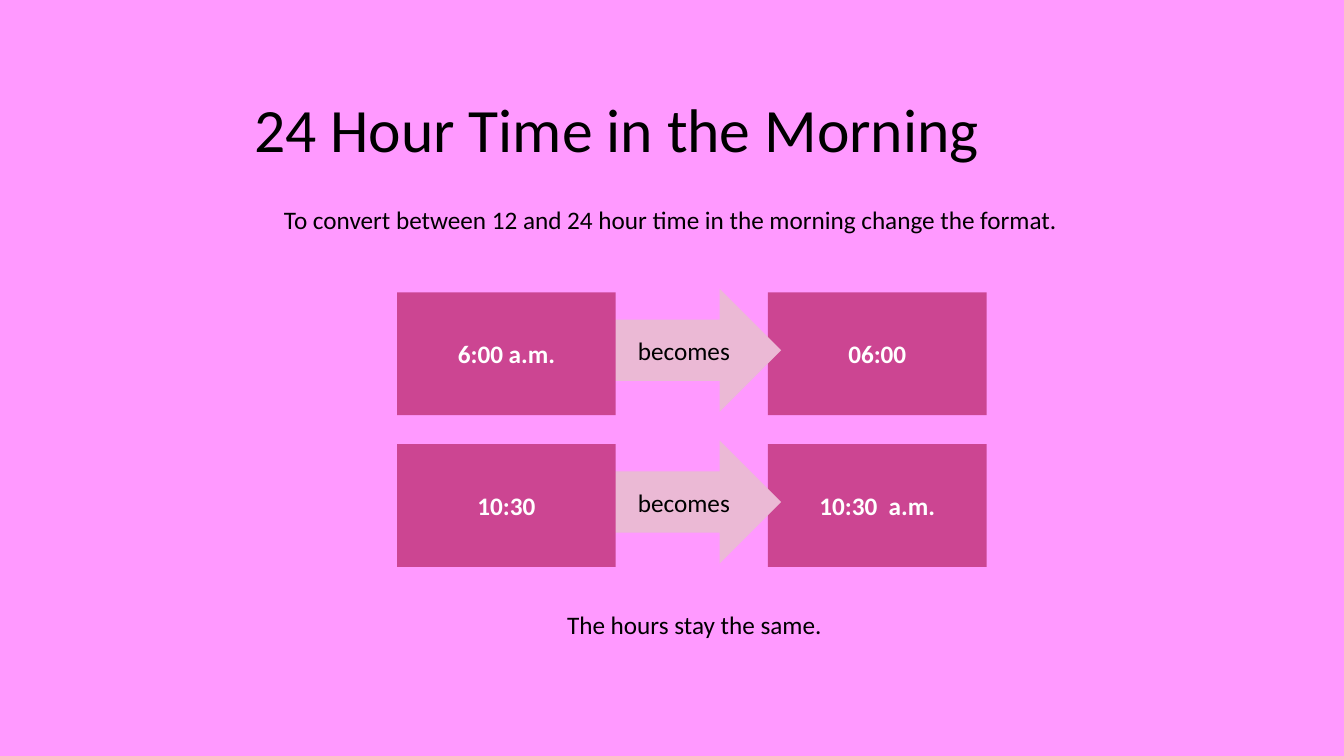
"""Build a slide on converting morning times between 12 and 24 hour formats."""
from pptx import Presentation
from pptx.dml.color import RGBColor
from pptx.enum.shapes import MSO_SHAPE
from pptx.enum.text import MSO_ANCHOR, MSO_AUTO_SIZE, PP_ALIGN
from pptx.util import Pt

RECTANGLE, ARROW = MSO_SHAPE.RECTANGLE, MSO_SHAPE.RIGHT_ARROW
TOP, MIDDLE = MSO_ANCHOR.TOP, MSO_ANCHOR.MIDDLE
LEFT, CENTER = PP_ALIGN.LEFT, PP_ALIGN.CENTER
NO_FIT = MSO_AUTO_SIZE.NONE

TITLE = "24 Hour Time in the Morning"
INTRO = "To convert between 12 and 24 hour time in the morning change the format."
CLOSING = "The hours stay the same."
LINK = "becomes"
CONVERSIONS = [("6:00 a.m.", "06:00"), ("10:30", "10:30  a.m.")]

COLORS = {"background": "FF99FF", "box": "CC4592", "arrow": "EBB9D5",
          "text": "000000", "box_text": "FFFFFF"}
FONT = "Calibri"

FIRST_ROW, ROW_PITCH = 208.8, 108.4
BOX_WIDTH, BOX_HEIGHT = 156.2, 87.8
FROM_LEFT, TO_LEFT = 283.7, 548.6
ARROW_LEFT, ARROW_WIDTH, ARROW_RISE = 431.3, 126.7, 2.5
LABEL_LEFT, LABEL_DROP = 448.6, 27


def color(name):
    return RGBColor.from_string(COLORS[name])


def write(shape, text, size=18, ink="text", align=LEFT, anchor=TOP, bold=False):
    frame = shape.text_frame
    frame.text = text
    frame.auto_size = NO_FIT
    frame.vertical_anchor = anchor
    para = frame.paragraphs[0]
    para.alignment = align
    para.font.name, para.font.size, para.font.bold = FONT, Pt(size), bold
    para.font.color.rgb = color(ink)
    return frame


def add_text(shapes, text, left, top, width, height, align=LEFT, wrap=False):
    box = shapes.add_textbox(Pt(left), Pt(top), Pt(width), Pt(height))
    write(box, text, align=align).word_wrap = wrap


def add_block(shapes, kind, left, top, width, fill):
    block = shapes.add_shape(kind, Pt(left), Pt(top), Pt(width), Pt(BOX_HEIGHT))
    block.shadow.inherit = False
    block.fill.solid()
    block.fill.fore_color.rgb = color(fill)
    block.line.fill.background()
    return block


def add_time(shapes, text, left, top):
    box = add_block(shapes, RECTANGLE, left, top, BOX_WIDTH, "box")
    write(box, text, ink="box_text", align=CENTER, anchor=MIDDLE, bold=True)


def add_conversion(page, before, after, top):
    shapes = page.shapes.add_group_shape().shapes
    add_time(shapes, after, TO_LEFT, top)
    add_block(shapes, ARROW, ARROW_LEFT, top - ARROW_RISE, ARROW_WIDTH, "arrow")
    add_text(shapes, LINK, LABEL_LEFT, top + LABEL_DROP, 81.4, 29)
    add_time(shapes, before, FROM_LEFT, top)


def main():
    deck = Presentation()
    deck.slide_width, deck.slide_height = Pt(960), Pt(540)
    page = deck.slides.add_slide(deck.slide_layouts[5])
    page.background.fill.solid()
    page.background.fill.fore_color.rgb = color("background")

    title = page.shapes.title
    title.left, title.top, title.width, title.height = Pt(172), Pt(64), Pt(647), Pt(78.5)
    frame = write(title, TITLE, size=44)
    frame.margin_left, frame.margin_top = Pt(9.5), Pt(7)
    frame.paragraphs[0].line_spacing = 0.9

    add_text(page.shapes, INTRO, 195.8, 142.6, 601, 51, wrap=True)
    add_text(page.shapes, CLOSING, 388, 432, 216, 29, align=CENTER)
    for row, (before, after) in enumerate(CONVERSIONS):
        add_conversion(page, before, after, FIRST_ROW + row * ROW_PITCH)

    deck.save("out.pptx")


if __name__ == "__main__":
    main()
